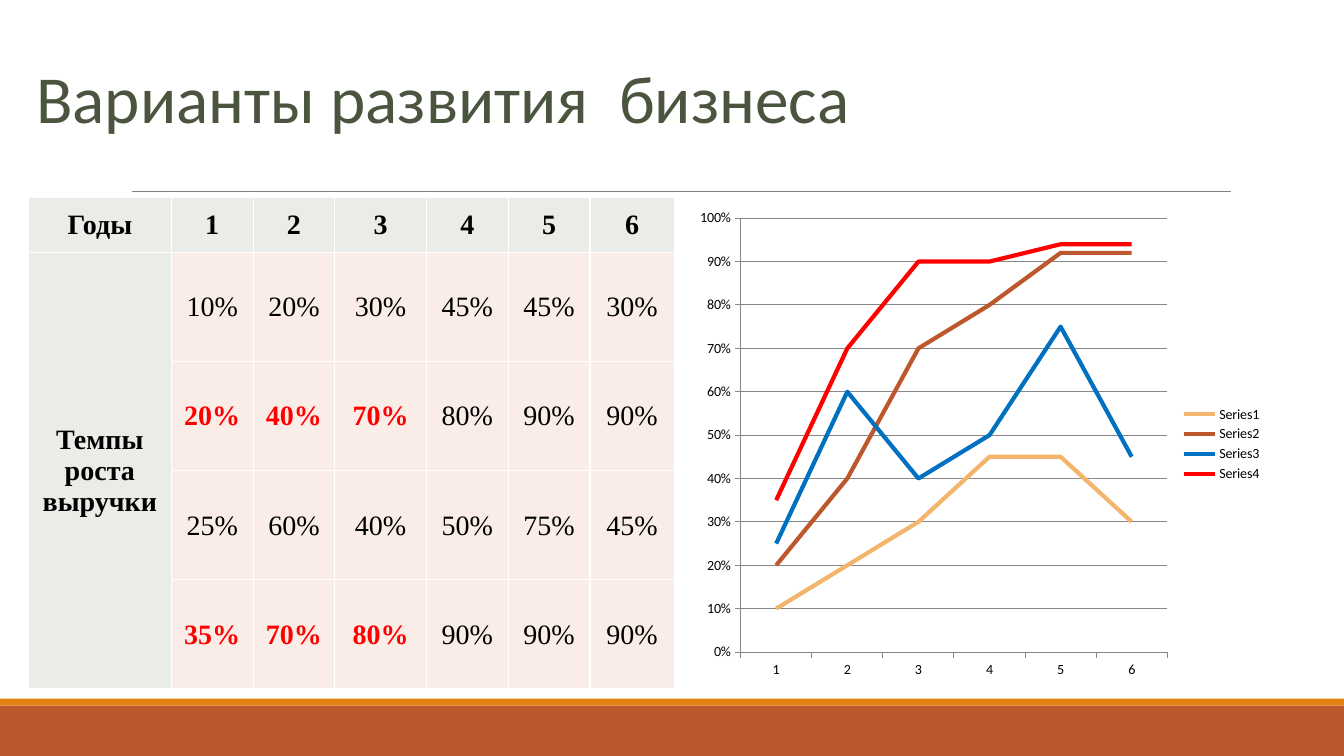
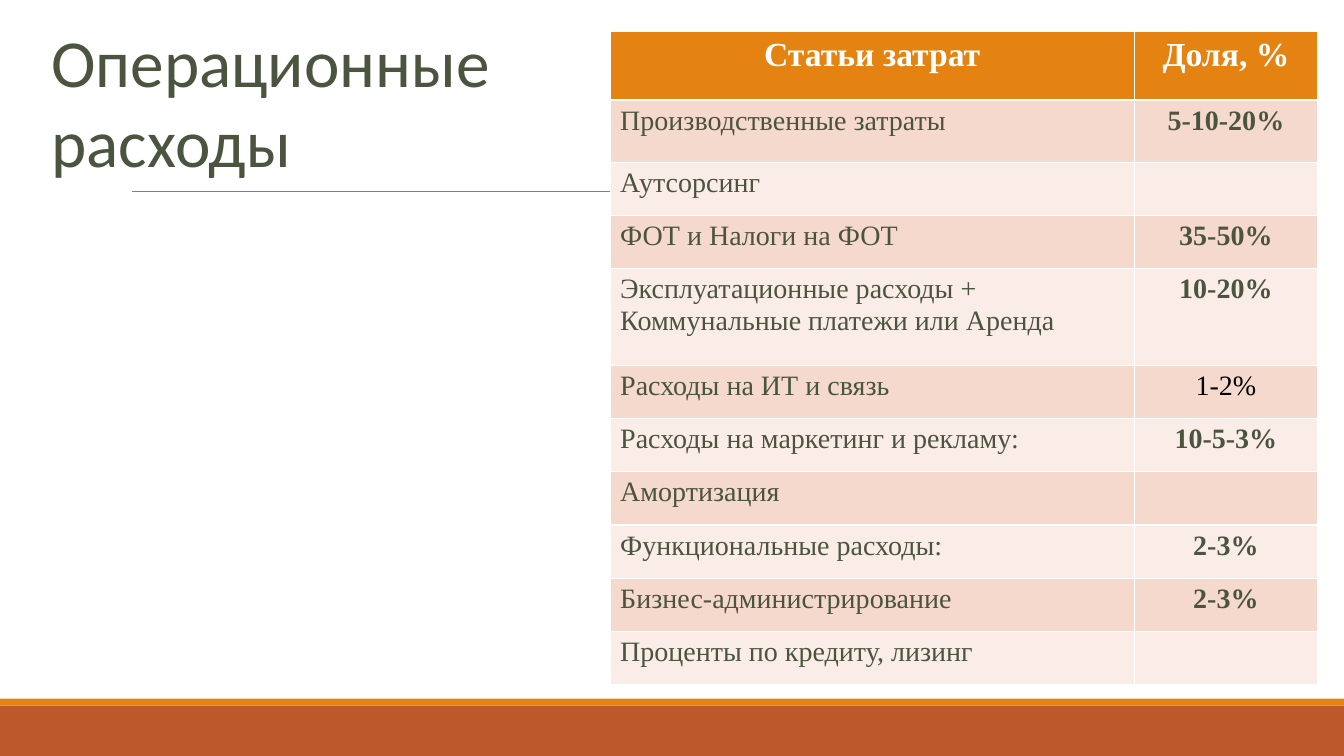
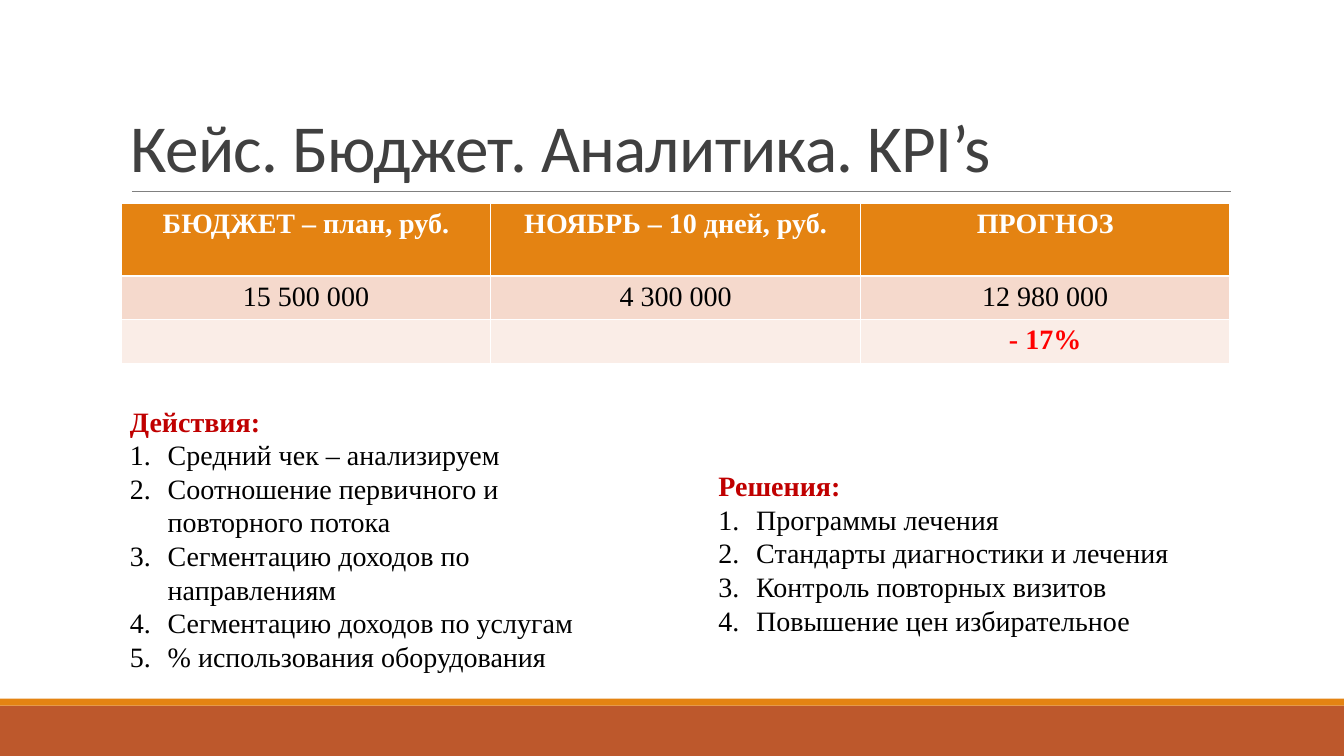
from lxml.etree import SubElement, Element
from pptx import Presentation
from pptx.chart.data import CategoryChartData
from pptx.dml.color import RGBColor
from pptx.enum.chart import XL_CHART_TYPE, XL_LEGEND_POSITION, XL_TICK_MARK
from pptx.enum.shapes import MSO_CONNECTOR, MSO_SHAPE
from pptx.enum.text import MSO_ANCHOR, PP_ALIGN
from pptx.oxml.ns import qn
from pptx.util import Pt

rgb = RGBColor.from_string
SERIF, SANS = "Times New Roman", "Calibri"
ORANGE, RUST, OLIVE = "E48312", "BD582C", "4A543E"
BLACK, WHITE, RED = "000000", "FFFFFF", "FF0000"
PALE_GREEN, PALE, PEACH = "EAECE7", "FAEDE7", "F5D9CC"


def set_font(paragraph, size, color, bold=False, name=SERIF):
    font = paragraph.font
    font.name, font.size, font.bold = name, Pt(size), bold
    font.color.rgb = rgb(color)


def fill_cell(cell, text, fill, color, bold=False, size=20, align=PP_ALIGN.CENTER):
    cell.fill.solid()
    cell.fill.fore_color.rgb = rgb(fill)
    cell.text = text
    paragraph = cell.text_frame.paragraphs[0]
    paragraph.alignment = align
    set_font(paragraph, size, color, bold)


prs = Presentation()
prs.slide_width, prs.slide_height = Pt(960), Pt(540)

# Shared bands, rule and title: lines, box, colour
titles = [
    (["Варианты развития  бизнеса"], (18.7, 36.7, 747, 65.5), OLIVE),
    (["Операционные", "расходы"], (29.5, 10.8, 783, 124), OLIVE),
    (["Кейс. Бюджет. Аналитика. KPI’s"], (86.4, 22.3, 792, 114.5), "404040"),
]
slides = []
for lines, box, color in titles:
    slide = prs.slides.add_slide(prs.slide_layouts[6])
    slides.append(slide)
    for top, height, fill in [(504, 36, RUST), (499, 5, ORANGE)]:
        band = slide.shapes.add_shape(MSO_SHAPE.RECTANGLE, 0, Pt(top), Pt(960), Pt(height))
        band.shadow.inherit = False
        band.fill.solid()
        band.fill.fore_color.rgb = rgb(fill)
        band.line.fill.background()
    rule = slide.shapes.add_connector(
        MSO_CONNECTOR.STRAIGHT, Pt(94.3), Pt(136.8), Pt(879), Pt(136.8))
    rule.line.color.rgb = rgb("808080")
    rule.line.width = Pt(0.5)
    SubElement(rule.element.spPr, qn("a:effectLst"))
    title = slide.shapes.add_textbox(*map(Pt, box)).text_frame
    title.word_wrap = True
    title.text = "\n".join(lines)
    for paragraph in title.paragraphs:
        set_font(paragraph, 48, color, name=SANS)
growth_slide, costs_slide, case_slide = slides

# The case title sits on the rule, set tighter
title.vertical_anchor = MSO_ANCHOR.BOTTOM
paragraph.line_spacing = 0.85
paragraph.runs[0].font.element.set("spc", "-50") if hasattr(
    paragraph.runs[0].font, "element") else paragraph.runs[0]._r.get_or_add_rPr().set("spc", "-50")

# Growth table
growth_rows = [
    ["Годы", "1", "2", "3", "4", "5", "6"],
    ["Темпы роста выручки", "10%", "20%", "30%", "45%", "45%", "30%"],
    ["", "20%", "40%", "70%", "80%", "90%", "90%"],
    ["", "25%", "60%", "40%", "50%", "75%", "45%"],
    ["", "35%", "70%", "80%", "90%", "90%", "90%"],
]
growth = growth_slide.shapes.add_table(5, 7, Pt(20.2), Pt(141.2), Pt(461.5), Pt(351)).table
growth.first_row = False
for column, width in zip(growth.columns, [102.2, 58.4, 58.4, 65.4, 58.4, 58.4, 60.3]):
    column.width = Pt(width)
for r, row in enumerate(growth_rows):
    growth.rows[r].height = Pt(78 if r else 39)
    for c, text in enumerate(row):
        cell = growth.cell(r, c)
        heading = r == 0 or c == 0
        marked = r in (2, 4) and 1 <= c <= 3
        fill_cell(cell, text, PALE_GREEN if heading else PALE,
                  RED if marked else BLACK, heading or marked)
        cell.vertical_anchor = MSO_ANCHOR.MIDDLE
        cell.margin_left = cell.margin_right = cell.margin_top = Pt(0.7)
        cell.margin_bottom = 0
growth.cell(1, 0).merge(growth.cell(4, 0))

# Growth chart
growth_series = [
    ("F3B56C", [0.1, 0.2, 0.3, 0.45, 0.45, 0.3]),
    (RUST, [0.2, 0.4, 0.7, 0.8, 0.92, 0.92]),
    ("0070C0", [0.25, 0.6, 0.4, 0.5, 0.75, 0.45]),
    (RED, [0.35, 0.7, 0.9, 0.9, 0.94, 0.94]),
]
data = CategoryChartData(number_format="0%")
data.categories = growth_rows[0][1:]
for number, (color, values) in enumerate(growth_series, 1):
    data.add_series(f"Series{number}", values)
chart = growth_slide.shapes.add_chart(
    XL_CHART_TYPE.LINE, Pt(491.8), Pt(143.3), Pt(417), Pt(347.8), data).chart
chart.has_title = False
chart.font.name, chart.font.size = SANS, Pt(10)
chart.font.color.rgb = rgb(BLACK)
chart.has_legend = True
chart.legend.position = XL_LEGEND_POSITION.RIGHT
chart.legend.include_in_layout = False
chart.plots[0].vary_by_categories = False
for series, (color, values) in zip(chart.plots[0].series, growth_series):
    series.smooth = False
    series.format.line.color.rgb = rgb(color)
    series.format.line.width = Pt(3)
shares = chart.value_axis
shares.minimum_scale, shares.maximum_scale, shares.major_unit = 0, 1, 0.1
shares.tick_labels.number_format = "0%"
shares.tick_labels.number_format_is_linked = False
shares.has_major_gridlines = True
for axis in (shares, chart.category_axis):
    axis.major_tick_mark = XL_TICK_MARK.OUTSIDE
    axis.format.line.color.rgb = rgb("878787")
shares.major_gridlines.format.line.color.rgb = rgb("878787")

# Operating costs table: item, share, row height
cost_rows = [
    ("Статьи затрат", "Доля, %", 49),
    ("Производственные затраты", "5-10-20%", 44.6),
    ("Аутсорсинг", "", 38),
    ("ФОТ и Налоги на ФОТ", "35-50%", 38),
    ("Эксплуатационные расходы + Коммунальные платежи или Аренда", "10-20%", 69),
    ("Расходы на ИТ и связь", "1-2%", 38),
    ("Расходы на маркетинг и рекламу:", "10-5-3%", 38),
    ("Амортизация", "", 38),
    ("Функциональные расходы:", "2-3%", 38),
    ("Бизнес-администрирование", "2-3%", 38),
    ("Проценты по кредиту, лизинг", "", 38),
]
costs = costs_slide.shapes.add_table(
    len(cost_rows), 2, Pt(435.8), Pt(22.5), Pt(505.4), Pt(466.6)).table
costs.columns[0].width, costs.columns[1].width = Pt(374.4), Pt(131)
for r, (item, share, height) in enumerate(cost_rows):
    costs.rows[r].height = Pt(height)
    if r == 0:
        fill_cell(costs.cell(r, 0), item, ORANGE, WHITE, True, 24)
        fill_cell(costs.cell(r, 1), share, ORANGE, WHITE, True, 24)
        continue
    fill = PEACH if r % 2 else PALE
    plain = share == "1-2%"
    fill_cell(costs.cell(r, 0), item, fill, OLIVE, align=PP_ALIGN.LEFT)
    fill_cell(costs.cell(r, 1), share, fill, BLACK if plain else OLIVE, not plain)

# Budget table: cells, fill, colour, bold, row height
budget_rows = [
    (["БЮДЖЕТ – план, руб.", "НОЯБРЬ – 10 дней, руб.", "ПРОГНОЗ"], ORANGE, WHITE, True, 51.6),
    (["15 500 000", "4 300 000", "12 980 000"], PEACH, BLACK, False, 29.2),
    (["", "", "- 17%"], PALE, RED, True, 29.2),
]
budget = case_slide.shapes.add_table(3, 3, Pt(86.6), Pt(145.6), Pt(792), Pt(110)).table
for r, (texts, fill, color, bold, height) in enumerate(budget_rows):
    budget.rows[r].height = Pt(height)
    for c, text in enumerate(texts):
        fill_cell(budget.cell(r, c), text, fill, color, bold)

# Numbered lists under the budget
case_lists = [
    ((85.7, 285.1, 362, 201), "Действия:", [
        "Средний чек – анализируем",
        "Соотношение первичного и повторного потока",
        "Сегментацию доходов по направлениям",
        "Сегментацию доходов по услугам",
        "% использования оборудования",
    ]),
    ((506, 331.2, 362, 128), "Решения:", [
        "Программы лечения",
        "Стандарты диагностики и лечения",
        "Контроль повторных визитов",
        "Повышение цен избирательное",
    ]),
]
for box, heading, items in case_lists:
    frame = case_slide.shapes.add_textbox(*map(Pt, box)).text_frame
    frame.word_wrap = True
    frame.text = "\n".join([heading, *items])
    set_font(frame.paragraphs[0], 20, "C00000", True)
    for paragraph in frame.paragraphs[1:]:
        properties = paragraph._p.get_or_add_pPr()
        properties.set("marL", str(Pt(27)))
        properties.set("indent", str(Pt(-27)))
        properties.insert(0, Element(qn("a:buAutoNum"), type="arabicPeriod"))
        set_font(paragraph, 20, BLACK)

prs.save("out.pptx")
